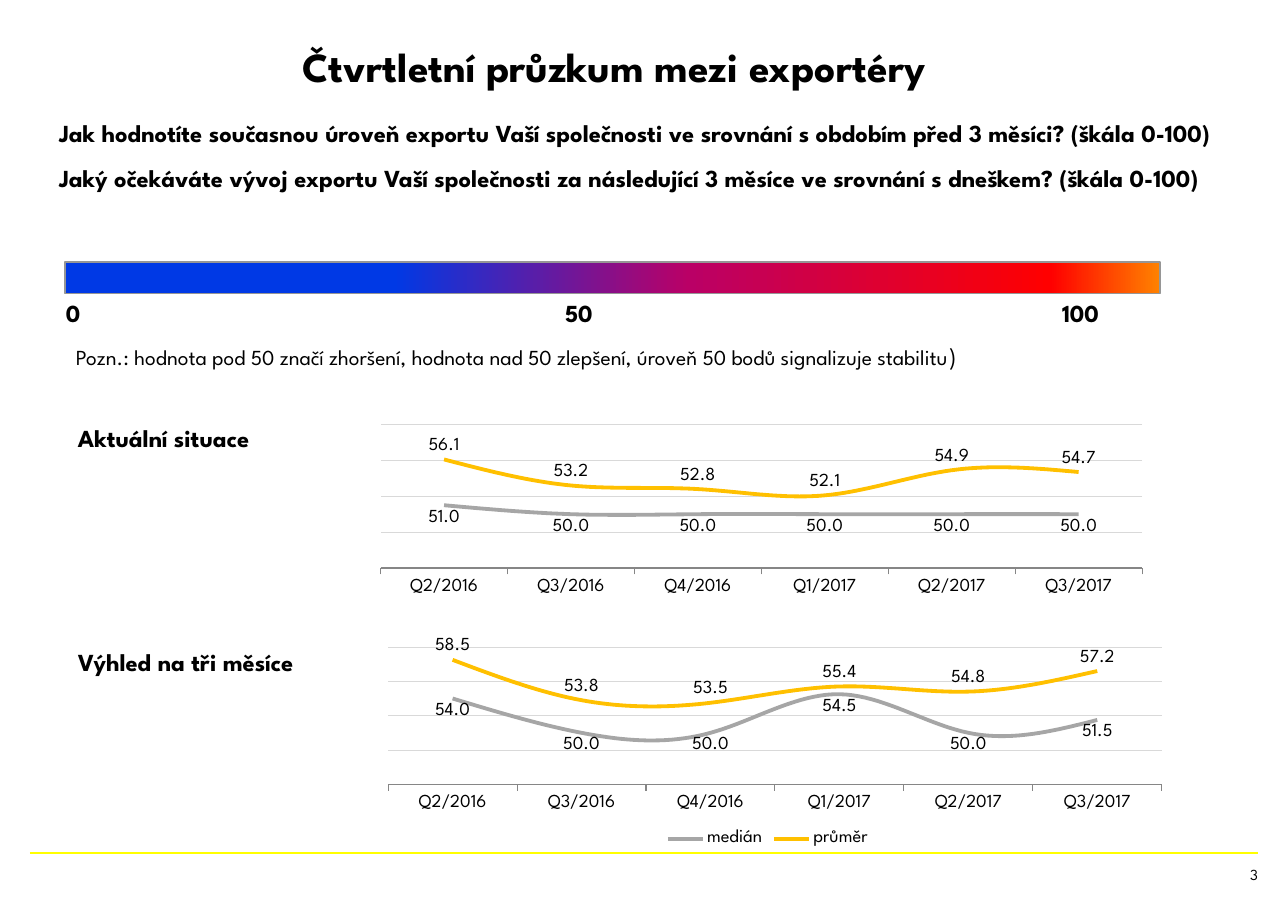
from lxml import etree
from pptx import Presentation
from pptx.chart.data import CategoryChartData
from pptx.dml.color import RGBColor
from pptx.enum.chart import XL_CHART_TYPE, XL_LABEL_POSITION, XL_LEGEND_POSITION, XL_TICK_MARK
from pptx.enum.shapes import MSO_CONNECTOR, MSO_SHAPE
from pptx.enum.text import MSO_ANCHOR, MSO_AUTO_SIZE, PP_ALIGN
from pptx.oxml.ns import qn
from pptx.util import Pt

PX = 914400 / 110.2
FONT = "League Spartan"
LEFT, RIGHT = PP_ALIGN.LEFT, PP_ALIGN.RIGHT
TOP, MIDDLE = MSO_ANCHOR.TOP, MSO_ANCHOR.MIDDLE
BELOW, ABOVE = XL_LABEL_POSITION.BELOW, XL_LABEL_POSITION.ABOVE
NO_TICK, OUT_TICK = XL_TICK_MARK.NONE, XL_TICK_MARK.OUTSIDE


def color(code):
    return RGBColor.from_string(code)


def write(box, at, lines, size, bold=False, align=LEFT, anchor=TOP):
    """Place a text shape without insets and fill it with formatted lines."""
    box.left, box.top, box.width, box.height = [round(v * PX) for v in at]
    frame = box.text_frame
    frame.text = "\n".join(lines)
    frame.word_wrap = True
    frame.auto_size = MSO_AUTO_SIZE.NONE
    frame.vertical_anchor = anchor
    frame.margin_left = frame.margin_right = frame.margin_top = frame.margin_bottom = 0
    for i, par in enumerate(frame.paragraphs):
        par.alignment = align
        par.space_before = Pt(10 if i else 0)
        for run in par.runs:
            run.font.name, run.font.size, run.font.bold = FONT, Pt(size), bold
            run.font.color.rgb = color("000000")


prs = Presentation()
prs.slide_width, prs.slide_height = round(1288 * PX), round(911 * PX)
slide = prs.slides.add_slide(prs.slide_layouts[1])
shapes = slide.shapes

# Title and questions
write(shapes.title, (302, 21, 936, 91), ["Čtvrtletní průzkum mezi exportéry"], 27, True, anchor=MIDDLE)
body = slide.placeholders[1]
write(body, (59, 118, 1184, 100), [
    "Jak hodnotíte současnou úroveň exportu Vaší společnosti ve srovnání s obdobím před 3 měsíci? (škála 0-100)",
    "Jaký očekáváte vývoj exportu Vaší společnosti za následující 3 měsíce ve srovnání s dneškem? (škála 0-100)",
], 16, True)
for par in body.text_frame.paragraphs:
    props = par._p.get_or_add_pPr()
    props.set("marL", "0")
    props.set("indent", "0")
    etree.SubElement(props, qn("a:buNone"))

# Colour scale
bar = shapes.add_shape(MSO_SHAPE.RECTANGLE, *[round(v * PX) for v in (65, 262, 1095, 32)])
bar.shadow.inherit = False
bar.line.color.rgb = color("969696")
bar.line.width = Pt(0.75)
bar.fill.gradient()
bar.fill.gradient_angle = 0
stops = bar._element.spPr.find(qn("a:gradFill")).find(qn("a:gsLst"))
for old in list(stops):
    stops.remove(old)
for pos, code in ((30, "0039E5"), (57, "BA0066"), (90, "FF0000"), (100, "FF8200")):
    stop = etree.SubElement(stops, qn("a:gs"), pos=str(pos * 1000))
    etree.SubElement(stop, qn("a:srgbClr"), val=code)
for x, mark in ((66, "0"), (565, "50"), (1062, "100")):
    write(shapes.add_textbox(0, 0, 0, 0), (x, 298, 60, 32), [mark], 16, True)

# Note and section labels
note = shapes.add_textbox(0, 0, 0, 0)
write(note, (76, 341, 1173, 36), [
    "Pozn.: hodnota pod 50 značí zhoršení, hodnota nad 50 zlepšení, úroveň 50 bodů signalizuje stabilitu"], 14)
end = note.text_frame.paragraphs[0].add_run()
end.text = ")"
end.font.name, end.font.size = FONT, Pt(16)
end.font.color.rgb = color("000000")
for y, name in ((423, "Aktuální situace"), (647, "Výhled na tři měsíce")):
    write(shapes.add_textbox(0, 0, 0, 0), (78, y, 250, 32), [name], 16, True)

# Charts
cats = ["Q2/2016", "Q3/2016", "Q4/2016", "Q1/2017", "Q2/2017", "Q3/2017"]
charts = (
    ((349, 406, 811, 229), 0.627, False,
     (51, 50, 50, 50, 50, 50), (56.1, 53.2, 52.8, 52.1, 54.9, 54.7)),
    ((356, 629, 824, 223), 0.616, True,
     (54, 50, 50, 54.5, 50, 51.5), (58.5, 53.8, 53.5, 55.4, 54.8, 57.2)),
)
for at, high, legend, median, mean in charts:
    data = CategoryChartData(number_format="0.0")
    data.categories = cats
    data.add_series("medián", median)
    data.add_series("průměr", mean)
    spot = [round(v * PX) for v in at]
    chart = shapes.add_chart(XL_CHART_TYPE.LINE, *spot, data).chart
    chart.font.name, chart.font.size = FONT, Pt(12)
    chart.font.color.rgb = color("000000")
    chart.has_title = False
    chart.has_legend = legend
    if legend:
        chart.legend.position = XL_LEGEND_POSITION.BOTTOM
        chart.legend.include_in_layout = False

    axis = chart.value_axis
    axis.minimum_scale, axis.maximum_scale, axis.major_unit = 44, 60, 4
    axis.visible = False
    axis.major_gridlines.format.line.color.rgb = color("D9D9D9")
    axis.major_gridlines.format.line.width = Pt(0.5)
    axis = chart.category_axis
    axis.major_tick_mark, axis.minor_tick_mark = OUT_TICK, NO_TICK
    axis.format.line.color.rgb = color("868686")
    axis.format.line.width = Pt(0.75)

    plot = chart.plots[0]
    plot.vary_by_categories = False
    for line, code, side in zip(plot.series, ("A6A6A6", "FFC000"), (BELOW, ABOVE)):
        line.smooth = True
        line.format.line.color.rgb = color(code)
        line.format.line.width = Pt(2.5)
        labels = line.data_labels
        labels.show_value = True
        labels.position = side
        labels.number_format, labels.number_format_is_linked = "0.0", False

    area = chart._chartSpace.chart.plotArea
    for old in area.findall(qn("c:layout")):
        area.remove(old)
    layout = etree.Element(qn("c:layout"))
    area.insert(0, layout)
    manual = etree.SubElement(layout, qn("c:manualLayout"))
    for tag, val in (("layoutTarget", "inner"), ("xMode", "edge"), ("yMode", "edge"),
                     ("x", 0.039), ("y", 0.081), ("w", 0.939), ("h", high)):
        etree.SubElement(manual, qn("c:" + tag), val=str(val))

# Footer
rule = shapes.add_connector(MSO_CONNECTOR.STRAIGHT, *[round(v * PX) for v in (30, 853, 1258, 853)])
rule.line.color.rgb = color("FFFF00")
rule.line.width = Pt(1)
etree.SubElement(rule._element.spPr, qn("a:effectLst"))
write(shapes.add_textbox(0, 0, 0, 0), (745, 865, 513, 40), ["3"], 10, align=RIGHT)

prs.save("out.pptx")
